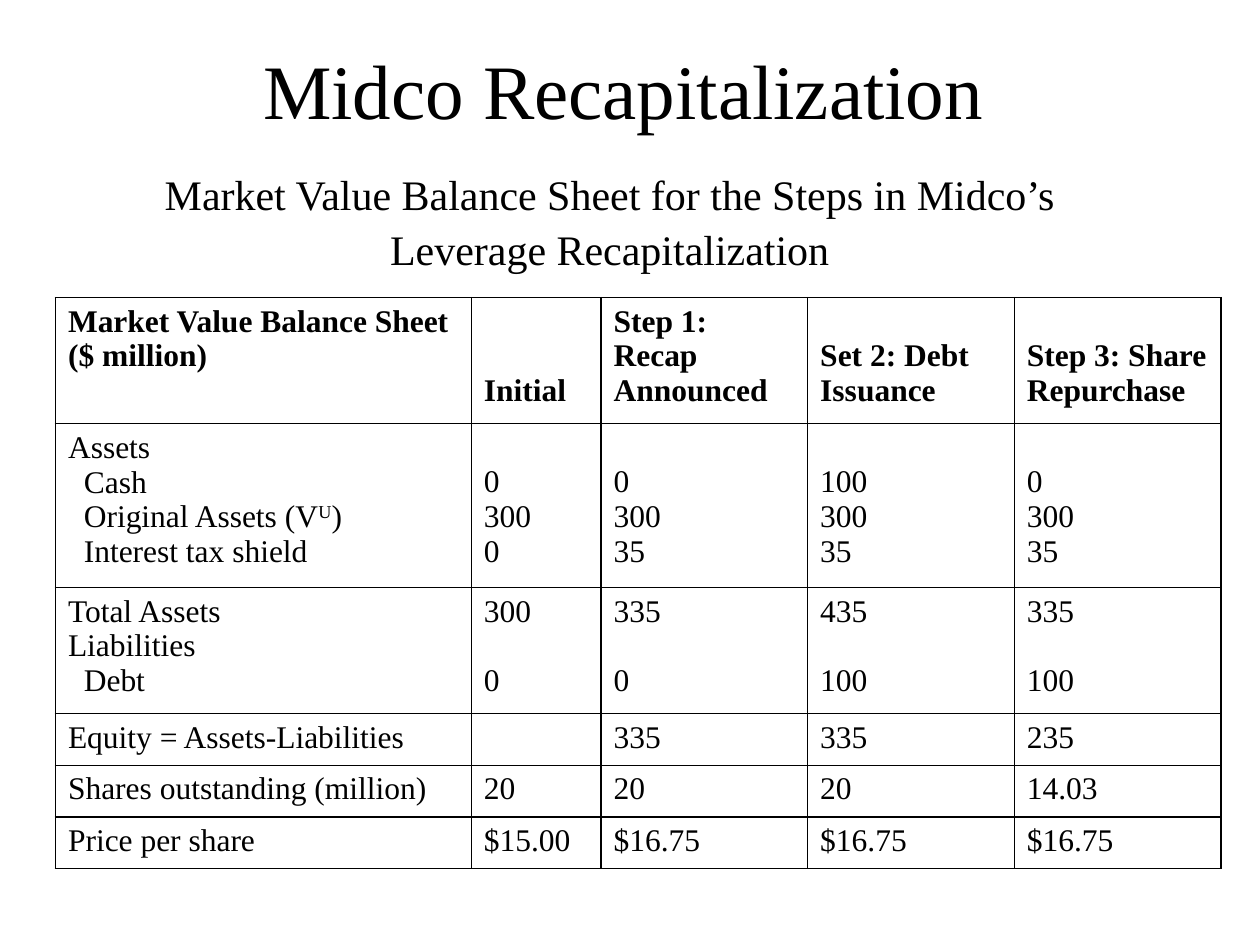
from dataclasses import dataclass
from itertools import product

from lxml import etree
from pptx import Presentation
from pptx import util as u
from pptx.dml.color import RGBColor
from pptx.enum import text
from pptx.oxml import ns

FONT = "Times New Roman"
BLACK, WHITE = "000000", "FFFFFF"
WIDTH, HEIGHT = 10, 7.5
BODY_SIZE = 18
LINE = 19.9  # height of one table line, in points
COLUMNS = [3.3, 1.03] + [1.64] * 3
ROWS = [1, 1.3, 1] + [0.41] * 3


@dataclass
class Heading:
    wording: str
    left: float  # all four lengths are shares of the slide
    top: float
    width: float
    height: float
    size: int
    anchor: text.MSO_ANCHOR
    spacing: float


@dataclass
class Line:
    wording: str
    indented: bool = False
    superscript: str = ""
    ending: str = ""
    skipped: int = 0  # lines left free above


@dataclass
class Row:
    cells: list[list[Line]]
    bold: bool = False


HEADINGS = [
    Heading("Midco Recapitalization", 0.07, 0.032, 0.85, 0.123, 44,
            text.MSO_ANCHOR.MIDDLE, 1),
    Heading("Market Value Balance Sheet for the Steps in Midco’s Leverage Recapitalization",
            0.08, 0.168, 0.808, 0.121, 24, text.MSO_ANCHOR.TOP, 1.08),
]


def values(*wordings: str, skipped: int = 0) -> list[Line]:
    """Lines of one cell, the first one moved down by the skipped lines."""
    return [Line(wording, skipped=0 if i else skipped) for i, wording in enumerate(wordings)]


def total_and_debt(total: str, debt: str) -> list[Line]:
    return [Line(total), Line(debt, skipped=1)]


TABLE = [
    Row([values("Market Value Balance Sheet ($ million)"),
         values("Initial", skipped=2),
         values("Step 1: Recap Announced"),
         values("Set 2: Debt Issuance", skipped=1),
         values("Step 3: Share Repurchase", skipped=1)], bold=True),
    Row([[Line("Assets"), Line("Cash", True),
          Line("Original Assets (V", True, "U", ")"),
          Line("Interest tax shield", True)],
         *(values(*column, skipped=1) for column in
           [("0", "300", "0"), ("0", "300", "35"), ("100", "300", "35"), ("0", "300", "35")])]),
    Row([[Line("Total Assets"), Line("Liabilities"), Line("Debt", True)],
         *(total_and_debt(*pair) for pair in
           [("300", "0"), ("335", "0"), ("435", "100"), ("335", "100")])]),
    *(Row([values(wording) if wording else [] for wording in wordings]) for wordings in [
        ("Equity = Assets-Liabilities", "", "335", "335", "235"),
        ("Shares outstanding (million)", "20", "20", "20", "14.03"),
        ("Price per share", "$15.00", "$16.75", "$16.75", "$16.75")]),
]


def colour(value: str) -> RGBColor:
    return RGBColor.from_string(value)


def add_run(paragraph, wording: str, size: float, bold: bool = False, raised: bool = False) -> None:
    run = paragraph.add_run()
    run.text = wording
    run.font.name, run.font.size, run.font.bold = FONT, u.Pt(size), bold
    run.font.color.rgb = colour(BLACK)
    if raised:
        run.font._element.set("baseline", "30000")


def add_heading(slide, heading: Heading) -> None:
    shape = slide.shapes.add_textbox(
        u.Inches(heading.left * WIDTH), u.Inches(heading.top * HEIGHT),
        u.Inches(heading.width * WIDTH), u.Inches(heading.height * HEIGHT))
    frame = shape.text_frame
    frame.word_wrap = True
    frame.vertical_anchor = heading.anchor
    paragraph = frame.paragraphs[0]
    paragraph.alignment = text.PP_ALIGN.CENTER
    paragraph.line_spacing = heading.spacing
    add_run(paragraph, heading.wording, heading.size)


def add_borders(cell) -> None:
    properties = cell._tc.get_or_add_tcPr()
    for position, side in enumerate(("lnL", "lnR", "lnT", "lnB")):
        border = etree.Element(ns.qn(f"a:{side}"), w=str(u.Pt(1)))
        fill = etree.SubElement(border, ns.qn("a:solidFill"))
        etree.SubElement(fill, ns.qn("a:srgbClr"), val=BLACK)
        properties.insert(position, border)


def fill_cell(cell, lines: list[Line], bold: bool) -> None:
    cell.fill.solid()
    cell.fill.fore_color.rgb = colour(WHITE)
    add_borders(cell)
    frame = cell.text_frame
    if not lines:
        frame.paragraphs[0].font.size = u.Pt(BODY_SIZE)
    for index, line in enumerate(lines):
        paragraph = frame.add_paragraph() if index else frame.paragraphs[0]
        gap = u.Pt(line.skipped * LINE)
        if index:
            paragraph.space_before = gap
        else:
            cell.margin_top = u.Inches(0.05) + gap
        if line.indented:
            paragraph._p.get_or_add_pPr().set("marL", str(u.Pt(BODY_SIZE / 2)))
        add_run(paragraph, line.wording, BODY_SIZE, bold)
        if line.superscript:
            add_run(paragraph, line.superscript, BODY_SIZE, bold, raised=True)
            add_run(paragraph, line.ending, BODY_SIZE, bold)


def add_balance_sheet(slide) -> None:
    table = slide.shapes.add_table(
        len(ROWS), len(COLUMNS), u.Inches(0.044 * WIDTH), u.Inches(0.315 * HEIGHT),
        u.Inches(sum(COLUMNS)), u.Inches(sum(ROWS))).table
    table.first_row = table.horz_banding = False
    for column, width in zip(table.columns, COLUMNS):
        column.width = u.Inches(width)
    for row, height in zip(table.rows, ROWS):
        row.height = u.Inches(height)
    for i, j in product(range(len(ROWS)), range(len(COLUMNS))):
        fill_cell(table.cell(i, j), TABLE[i].cells[j], TABLE[i].bold)


def main() -> None:
    presentation = Presentation()
    presentation.slide_width, presentation.slide_height = u.Inches(WIDTH), u.Inches(HEIGHT)
    slide = presentation.slides.add_slide(presentation.slide_layouts[6])
    # Title and subtitle
    for heading in HEADINGS:
        add_heading(slide, heading)
    # Balance sheet by step
    add_balance_sheet(slide)
    presentation.save("out.pptx")


if __name__ == "__main__":
    main()
